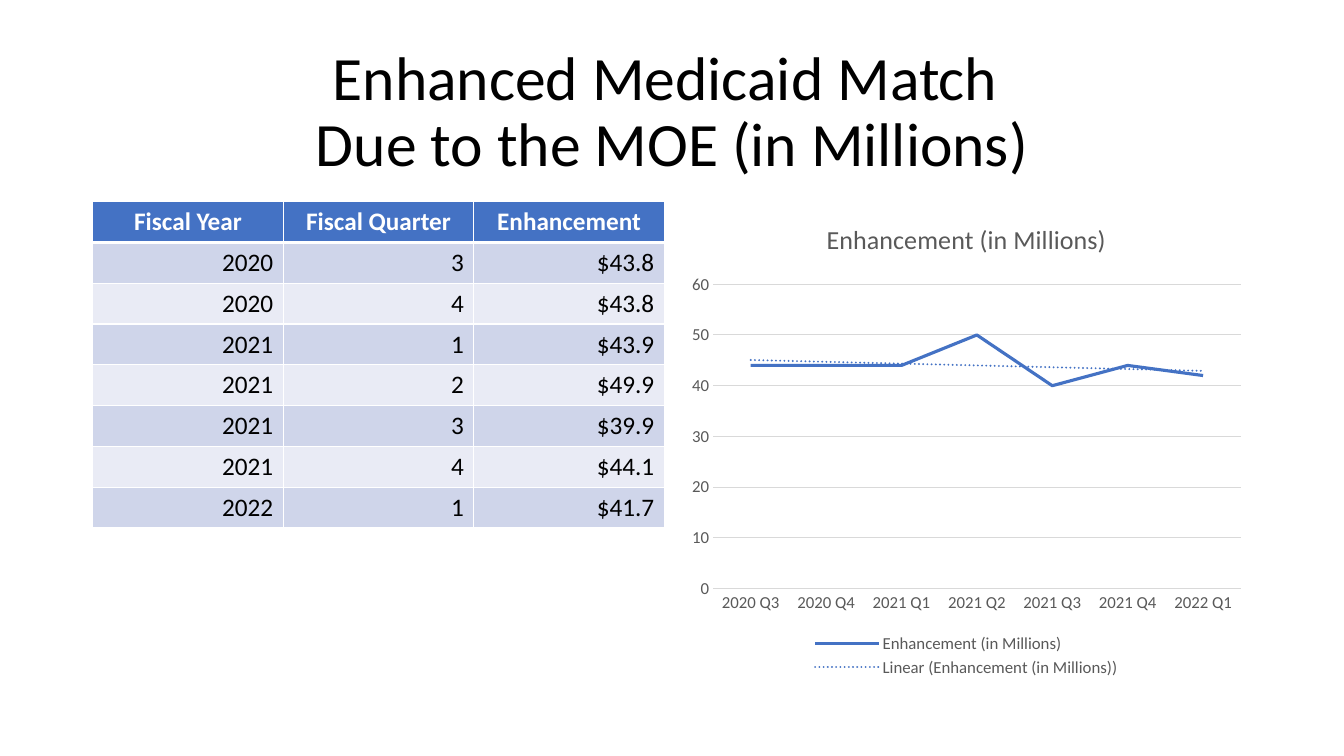
from pptx import Presentation
from pptx.chart.data import CategoryChartData
from pptx.dml.color import RGBColor
from pptx.enum.chart import XL_CHART_TYPE as ChartType, XL_LEGEND_POSITION as LegendPosition
from pptx.enum.chart import XL_MARKER_STYLE as MarkerStyle, XL_TICK_MARK as TickMark
from pptx.enum.text import MSO_ANCHOR as Anchor, PP_ALIGN as Align
from pptx.oxml import parse_xml
from pptx.oxml.ns import nsdecls, qn
from pptx.util import Inches, Pt

BLACK = RGBColor(0x00, 0x00, 0x00)
WHITE = RGBColor(0xFF, 0xFF, 0xFF)
BLUE = RGBColor(0x44, 0x72, 0xC4)
BAND_DARK = RGBColor(0xCF, 0xD5, 0xEA)
BAND_LIGHT = RGBColor(0xE9, 0xEB, 0xF5)
GRAY = RGBColor(0x59, 0x59, 0x59)
GRID_GRAY = RGBColor(0xD9, 0xD9, 0xD9)
FONT = "Calibri"

TITLE = "Enhanced Medicaid Match \vDue to the MOE (in Millions)"
HEADERS = ("Fiscal Year", "Fiscal Quarter", "Enhancement")
SERIES_NAME = "Enhancement (in Millions)"
QUARTERS = (
    (2020, 3, 43.8),
    (2020, 4, 43.8),
    (2021, 1, 43.9),
    (2021, 2, 49.9),
    (2021, 3, 39.9),
    (2021, 4, 44.1),
    (2022, 1, 41.7),
)


def style_font(font, size, color, bold=False):
    """Apply the slide's typeface with a size, colour and weight."""
    font.name = FONT
    font.size = Pt(size)
    font.bold = bold
    font.color.rgb = color


def add_title(slide, left, top, width, height):
    """Place the centred two-line title in the given box."""
    text_frame = slide.shapes.add_textbox(
        Inches(left), Inches(top), Inches(width), Inches(height)).text_frame
    text_frame.word_wrap = True
    text_frame.vertical_anchor = Anchor.MIDDLE
    paragraph = text_frame.paragraphs[0]
    paragraph.text = TITLE
    paragraph.alignment = Align.CENTER
    paragraph.line_spacing = 0.9
    for run in paragraph.runs:
        style_font(run.font, 44, BLACK)


def fill_cell(cell, text, fill, color, alignment, bold):
    """Write one table cell and give it its fill."""
    cell.fill.solid()
    cell.fill.fore_color.rgb = fill
    paragraph = cell.text_frame.paragraphs[0]
    paragraph.text = text
    paragraph.alignment = alignment
    style_font(paragraph.runs[0].font, 18, color, bold)


def add_bottom_border(cell, color, width):
    """Draw a solid line along the bottom of a cell."""
    border = parse_xml(
        f'<a:lnB {nsdecls("a")} w="{Pt(width)}"><a:solidFill>'
        f'<a:srgbClr val="{color}"/></a:solidFill></a:lnB>')
    cell._tc.get_or_add_tcPr().insert(0, border)


def add_enhancement_table(slide, left, top, width, height):
    """Place the quarterly table with a header and banded rows."""
    rows = len(QUARTERS) + 1
    table = slide.shapes.add_table(
        rows, len(HEADERS), Inches(left), Inches(top), Inches(width), Inches(height)).table
    for column, header in enumerate(HEADERS):
        cell = table.cell(0, column)
        fill_cell(cell, header, BLUE, WHITE, Align.CENTER, True)
        add_bottom_border(cell, WHITE, 3)
    for row, (year, quarter, amount) in enumerate(QUARTERS, start=1):
        band = BAND_DARK if row % 2 else BAND_LIGHT
        for column, text in enumerate((str(year), str(quarter), f"${amount}")):
            fill_cell(table.cell(row, column), text, band, BLACK, Align.RIGHT, False)


def add_trend_line(series):
    """Give a series a dotted linear trend line."""
    trend_line = parse_xml(
        f'<c:trendline {nsdecls("c", "a")}><c:spPr><a:ln w="{Pt(1.5)}" cap="rnd">'
        f'<a:solidFill><a:srgbClr val="{BLUE}"/></a:solidFill><a:prstDash val="sysDot"/>'
        '</a:ln></c:spPr><c:trendlineType val="linear"/>'
        '<c:dispRSqr val="0"/><c:dispEq val="0"/></c:trendline>')
    series._element.find(qn("c:cat")).addprevious(trend_line)


def style_line(line, color, width):
    """Set the colour and width of a line."""
    line.color.rgb = color
    line.width = Pt(width)


def style_axes(chart):
    """Format both axes and the horizontal gridlines."""
    for axis in (chart.category_axis, chart.value_axis):
        axis.major_tick_mark = TickMark.NONE
        axis.minor_tick_mark = TickMark.NONE
        style_font(axis.tick_labels.font, 12, GRAY)
    style_line(chart.category_axis.format.line, GRID_GRAY, 0.75)
    value_axis = chart.value_axis
    value_axis.format.line.fill.background()
    value_axis.minimum_scale = 0
    value_axis.maximum_scale = 60
    value_axis.major_unit = 10
    value_axis.tick_labels.number_format = "0"
    value_axis.tick_labels.number_format_is_linked = False
    style_line(value_axis.major_gridlines.format.line, GRID_GRAY, 0.75)


def add_enhancement_chart(slide, left, top, width, height):
    """Place the line chart with its trend line and bottom legend."""
    data = CategoryChartData()
    data.categories = [f"{year} Q{quarter}" for year, quarter, _ in QUARTERS]
    data.add_series(SERIES_NAME, [round(amount) for _, _, amount in QUARTERS])
    chart = slide.shapes.add_chart(
        ChartType.LINE, Inches(left), Inches(top), Inches(width), Inches(height), data).chart
    style_font(chart.font, 10, BLACK)

    chart.has_title = True
    paragraph = chart.chart_title.text_frame.paragraphs[0]
    paragraph.text = SERIES_NAME
    style_font(paragraph.runs[0].font, 18.6, GRAY)

    chart.has_legend = True
    chart.legend.position = LegendPosition.BOTTOM
    chart.legend.include_in_layout = False
    style_font(chart.legend.font, 12, GRAY)

    style_axes(chart)
    chart.plots[0].vary_by_categories = False
    series = chart.plots[0].series[0]
    series.smooth = False
    series.marker.style = MarkerStyle.NONE
    style_line(series.format.line, BLUE, 2.25)
    add_trend_line(series)


def main():
    """Build and save the slide."""
    presentation = Presentation()
    presentation.slide_width = Inches(13.33)
    presentation.slide_height = Inches(7.5)
    slide = presentation.slides.add_slide(presentation.slide_layouts[6])
    add_title(slide, 0.92, 0.4, 11.5, 1.45)
    add_enhancement_table(slide, 0.92, 2, 5.67, 3.24)
    add_enhancement_chart(slide, 6.75, 2, 5.67, 4.76)
    presentation.save("out.pptx")


if __name__ == "__main__":
    main()
